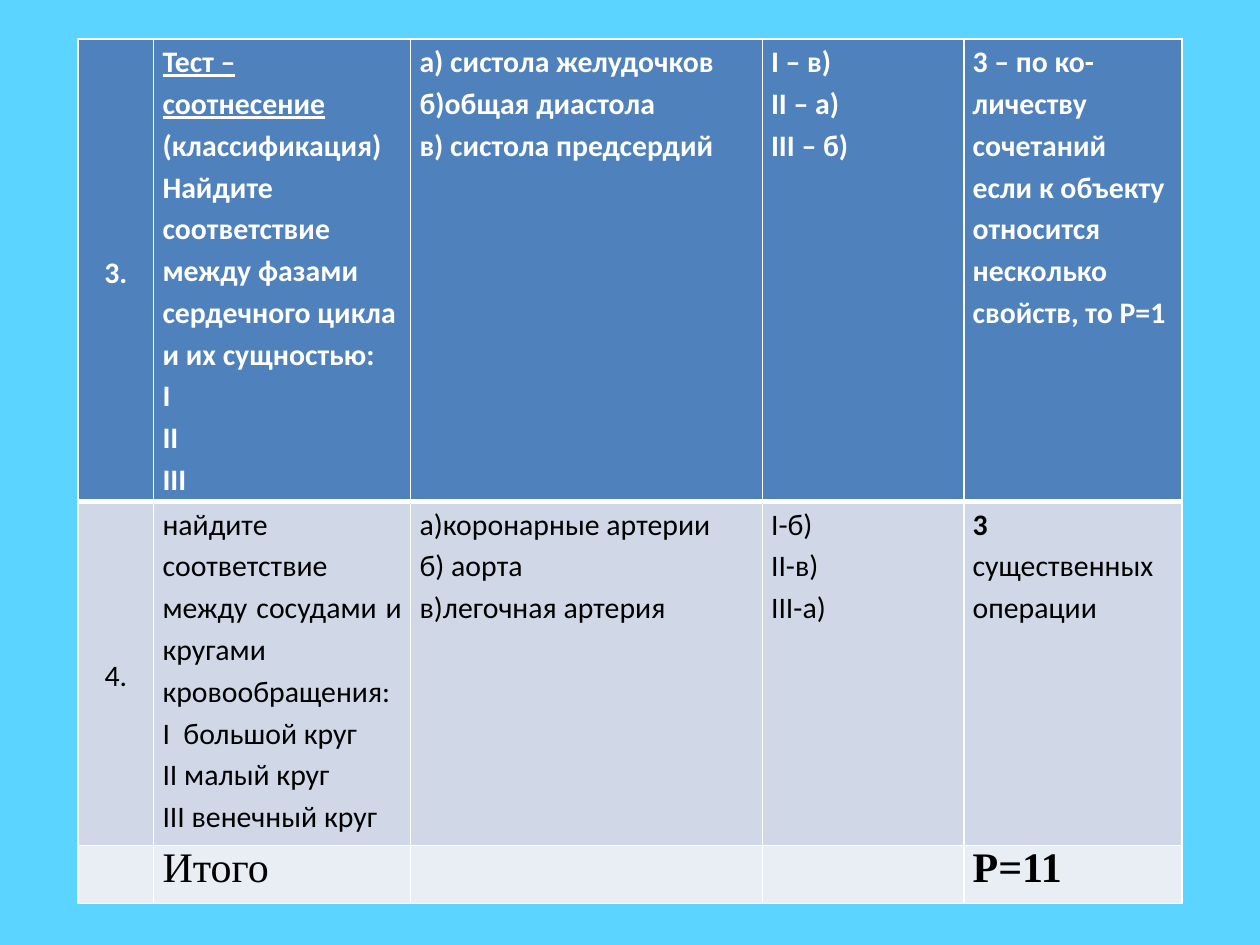
from lxml.etree import SubElement
from pptx import Presentation
from pptx.dml.color import RGBColor
from pptx.enum.text import MSO_ANCHOR as Anchor, PP_ALIGN as Align
from pptx.oxml.ns import qn
from pptx.util import Inches, Pt

SKY = RGBColor(0x5B, 0xD4, 0xFF)
WHITE = RGBColor(0xFF, 0xFF, 0xFF)
BLACK = RGBColor(0x00, 0x00, 0x00)
HEADER_BLUE = RGBColor(0x4F, 0x81, 0xBD)
BAND_DARK = RGBColor(0xD0, 0xD8, 0xE8)
BAND_LIGHT = RGBColor(0xE9, 0xED, 0xF4)

COLUMN_WIDTHS = [0.6, 2.04, 2.79, 1.6, 1.73]

# Each cell is a list of paragraphs; a paragraph is a list of (text, format) runs
HEADER_CELLS = [
    [[("3.", {})]],
    [[("Тест – соотнесение ", {"underline": True}),
      ("(классификация) Найдите соответствие между фазами "
       "сердечного цикла и их сущностью:", {})],
     [("I", {})], [("II", {})], [("III", {})]],
    [[("а) систола желудочков", {})], [("б)общая диастола", {})],
     [("в) систола предсердий", {})]],
    [[("I – в)", {})], [("II – а)", {})], [("III – б)", {})]],
    [[("3 – по ко-личеству сочетаний", {})],
     [("если к объекту относится несколько свойств, то Р=1", {})]],
]
VESSEL_CELLS = [
    [[("4.", {})]],
    [[("найдите соответствие между сосудами и кругами кровообращения: ", {})],
     [("I  большой круг", {})], [("II малый круг", {})],
     [("III венечный круг", {})]],
    [[("а)коронарные артерии", {})], [("б) аорта", {})],
     [("в)легочная артерия", {})]],
    [[("I-б)", {})], [("II-в)", {})], [("III-а)", {})]],
    [[("3 ", {"bold": True}), ("существенных операции", {})]],
]
TOTAL_CELLS = [[], [[("Итого", {})]], [], [], [[("Р=11", {"bold": True})]]]

BODY_FONT = {"name": "Calibri", "size": Pt(17)}
TOTAL_FONT = {"name": "Times New Roman", "size": Pt(24), "bold": False}
L, C, J = Align.LEFT, Align.CENTER, Align.JUSTIFY

# Row styles: top and bottom are border widths in points
ROWS = [
    {"cells": HEADER_CELLS, "height": 3.67, "fill": HEADER_BLUE, "color": WHITE,
     "font": BODY_FONT | {"bold": True}, "spacing": 1.15,
     "aligns": [C, L, L, L, L], "top": 1, "bottom": 3},
    {"cells": VESSEL_CELLS, "height": 2.73, "fill": BAND_DARK, "color": BLACK,
     "font": BODY_FONT | {"bold": False}, "spacing": 1.15,
     "aligns": [C, J, J, J, L], "top": 3, "bottom": 1},
    {"cells": TOTAL_CELLS, "height": 0.46, "fill": BAND_LIGHT, "color": BLACK,
     "font": TOTAL_FONT, "spacing": None,
     "aligns": [L, L, L, L, J], "top": 1, "bottom": 1},
]


class SlideBuilder:
    """Holds the current slide and the shared cell style."""

    cell_format = {"margin_left": Inches(0.07), "margin_right": Inches(0.07),
                   "margin_top": 0, "margin_bottom": 0}
    border_color = WHITE

    def __init__(self, slide):
        self.slide = slide

    def background(self, color):
        fill = self.slide.background.fill
        fill.solid()
        fill.fore_color.rgb = color

    def table(self, left, top, widths, rows):
        heights = [row["height"] for row in rows]
        grid = self.slide.shapes.add_table(
            len(rows), len(widths), Inches(left), Inches(top),
            Inches(sum(widths)), Inches(sum(heights))).table
        for column, width in zip(grid.columns, widths):
            column.width = Inches(width)
        for r, row in enumerate(rows):
            grid.rows[r].height = Inches(row["height"])
            for c, paragraphs in enumerate(row["cells"]):
                self.cell(grid.cell(r, c), paragraphs, row, row["aligns"][c])

    def cell(self, cell, paragraphs, style, align):
        for name, value in self.cell_format.items():
            setattr(cell, name, value)
        cell.vertical_anchor = Anchor.MIDDLE if align == Align.CENTER else Anchor.TOP
        cell.fill.solid()
        cell.fill.fore_color.rgb = style["fill"]
        self.borders(cell, style["top"], style["bottom"])
        frame = cell.text_frame
        for i, runs in enumerate(paragraphs):
            paragraph = frame.add_paragraph() if i else frame.paragraphs[0]
            paragraph.alignment = align
            paragraph.line_spacing = style["spacing"]
            for text, overrides in runs:
                self.run(paragraph, text, style["font"] | overrides, style["color"])

    def run(self, paragraph, text, font_format, color):
        run = paragraph.add_run()
        run.text = text
        for name, value in font_format.items():
            setattr(run.font, name, value)
        run.font.color.rgb = color

    def borders(self, cell, top, bottom):
        properties = cell._tc.get_or_add_tcPr()
        sides = {"a:lnL": 1, "a:lnR": 1, "a:lnT": top, "a:lnB": bottom}
        for position, (tag, width) in enumerate(sides.items()):
            line = SubElement(properties, qn(tag), w=str(Pt(width)))
            fill = SubElement(line, qn("a:solidFill"))
            SubElement(fill, qn("a:srgbClr"), val=str(self.border_color))
            # Border lines must precede the cell fill
            properties.insert(position, line)


def main():
    presentation = Presentation()
    presentation.slide_width = Inches(10)
    presentation.slide_height = Inches(7.5)
    blank = presentation.slide_layouts[6]
    builder = SlideBuilder(presentation.slides.add_slide(blank))

    # Background and test scoring table
    builder.background(SKY)
    builder.table(0.62, 0.31, COLUMN_WIDTHS, ROWS)

    presentation.save("out.pptx")


if __name__ == "__main__":
    main()
